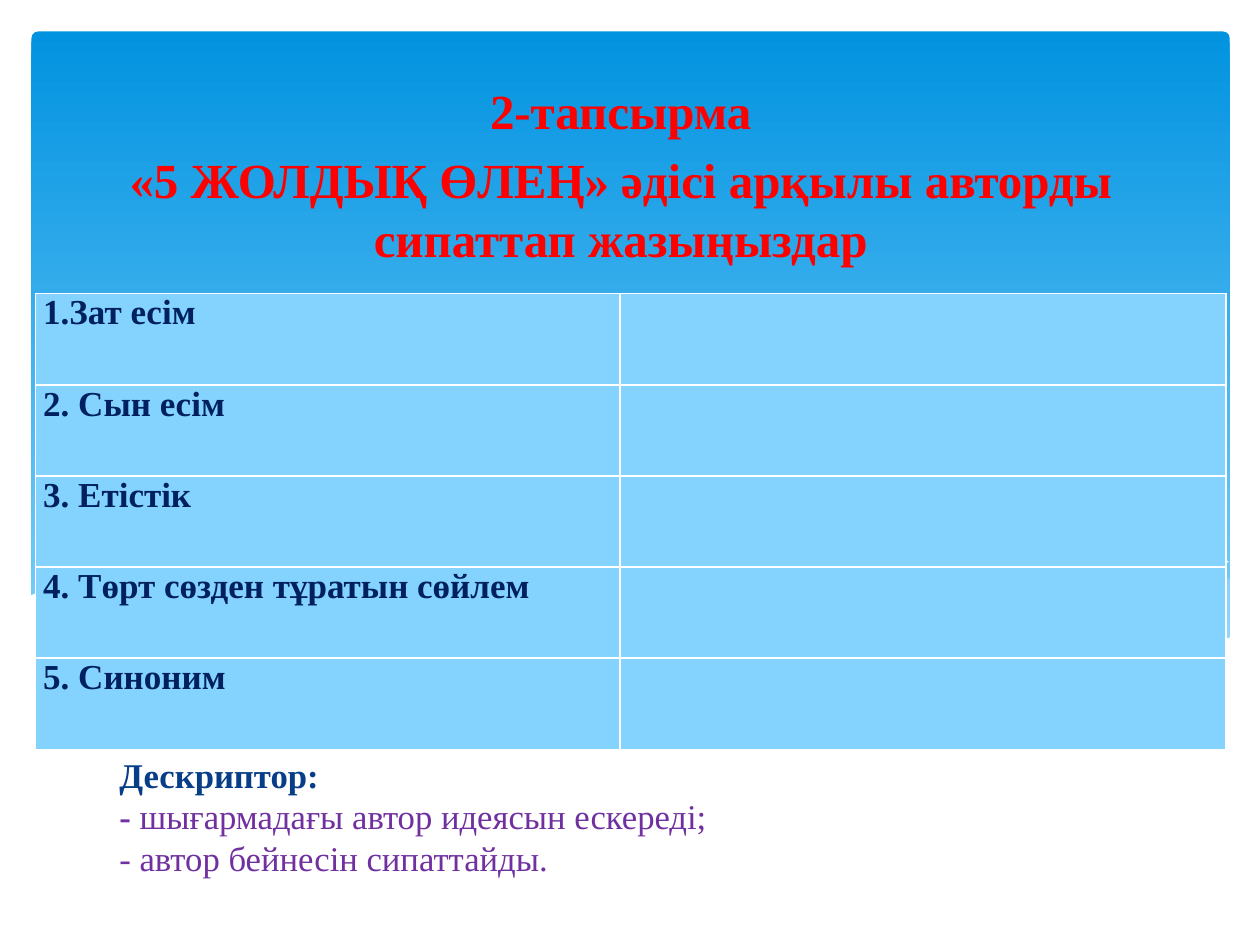
import pptx
import pptx.util
import pptx.dml.color
import pptx.enum.text
import pptx.enum.shapes
import lxml.etree

Pt = pptx.util.Pt
RGB = pptx.dml.color.RGBColor
Align = pptx.enum.text.PP_ALIGN
Anchor = pptx.enum.text.MSO_ANCHOR

WHITE = RGB(255, 255, 255)
DEEP = RGB(0x02, 0x93, 0xE0)
SKY = RGB(0x83, 0xD3, 0xFE)
PALE = RGB(0xC6, 0xE7, 0xFC)
RED = RGB(255, 0, 0)
NAVY = RGB(0x00, 0x20, 0x60)
BLUE = RGB(0x07, 0x3E, 0x87)
PLUM = RGB(0x70, 0x30, 0xA0)

# Content
TITLE = ["2-тапсырма",
         "«5 ЖОЛДЫҚ ӨЛЕҢ» әдісі арқылы авторды сипаттап жазыңыздар"]
ROWS = ["1.Зат есім", "2. Сын есім", "3. Етістік",
        "4. Төрт сөзден тұратын сөйлем", "5. Синоним"]
# Each line holds runs of text, colour, bold
NOTES = [[("Дескриптор:", BLUE, True)],
         [("- ", PLUM, True),
          ("шығармадағы автор идеясын ескереді;", PLUM, False)],
         [("- автор бейнесін сипаттайды.", PLUM, False)]]

# Waves: fill, opacity in percent, outline points
WAVES = [
    (PALE, 29, [(702, 331), (663, 338), (620, 348), (561, 362), (508, 373),
                (476, 378), (518, 384), (562, 387), (601, 387), (640, 383),
                (673, 376), (702, 365), (703, 365), (703, 331)]),
    (PALE, 40, [(643, 384), (603, 378), (558, 370), (508, 360), (453, 347),
                (410, 337), (370, 330), (335, 325), (287, 321), (248, 321),
                (206, 325), (246, 330), (291, 339), (353, 354), (408, 366),
                (456, 376), (500, 382), (539, 386), (581, 388), (617, 387)]),
    (WHITE, 0, [(222, 328), (248, 324), (289, 322), (338, 323), (400, 329),
                (458, 337), (523, 350), (598, 368), (653, 383)]),
    (WHITE, 0, [(441, 372), (470, 364), (518, 352), (580, 338), (634, 328),
                (675, 322), (702, 321)]),
    (WHITE, 100, [(703.5, 364), (670, 376), (630, 383), (582, 387),
                  (535, 385), (481, 378), (417, 367), (362, 355), (322, 346),
                  (263, 332), (210, 325), (166, 320), (127, 320), (95, 322),
                  (61, 328), (33, 334), (16.6, 340.6), (16.6, 424),
                  (703.5, 424)]),
]


def style(run, **vals):
    run.font.name = "Times New Roman"
    run.font.color.rgb = vals.pop("tint")
    for key, val in vals.items():
        setattr(run.font, key, val)


def add_box(left, top, wide, high):
    frame = slide.shapes.add_textbox(
        Pt(left), Pt(top), Pt(wide), Pt(high)).text_frame
    frame.word_wrap = True
    return frame


show = pptx.Presentation()
show.slide_width, show.slide_height = Pt(720), Pt(540)
slide = show.slides.add_slide(show.slide_layouts[6])

# Gradient panel
panel = slide.shapes.add_shape(
    pptx.enum.shapes.MSO_SHAPE.ROUNDED_RECTANGLE,
    Pt(18), Pt(18), Pt(684.7), Pt(373))
panel.adjustments[0] = 0.01
panel.shadow.inherit = False
panel.line.fill.background()
panel.fill.gradient()
panel.fill.gradient_angle = 270
for stop, place, tint in zip(panel.fill.gradient_stops, (0, 1), (DEEP, SKY)):
    stop.position = place
    stop.color.rgb = tint

# Waves: an unfilled one is an open white curve
for tint, part, spots in WAVES:
    spots = [(Pt(x), Pt(y)) for x, y in spots]
    pen = slide.shapes.build_freeform(*spots[0])
    pen.add_line_segments(spots[1:], close=part > 0)
    wave = pen.convert_to_shape()
    wave.shadow.inherit = False
    if part:
        wave.line.fill.background()
        wave.fill.solid()
        wave.fill.fore_color.rgb = tint
        hue = wave.fill._xPr.find(".//{*}srgbClr")
        lxml.etree.SubElement(
            hue, pptx.oxml.ns.qn("a:alpha"), val=str(part * 1000))
    else:
        wave.fill.background()
        wave.line.color.rgb = tint
        wave.line.width = Pt(0)

# Descriptor notes
para = add_box(61.2, 427, 640, 111.6).paragraphs[0]
para.line_spacing = Pt(23.8)
for i, line in enumerate(NOTES):
    if i:
        para.add_line_break()
    for text, tint, bold in line:
        run = para.add_run()
        run.text = text
        style(run, tint=tint, bold=bold, size=Pt(19.8))

# Heading
head = add_box(20.2, 25.9, 668.9, 130.3)
head.vertical_anchor = Anchor.BOTTOM
for i, text in enumerate(TITLE):
    para = head.add_paragraph() if i else head.paragraphs[0]
    para.alignment = Align.CENTER
    para.space_before = Pt(5.6 if i else 0)
    run = para.add_run()
    run.text = text
    style(run, tint=RED, bold=True, size=Pt(28))

# Table
COLS = (334.1, 346.3)
STEP = 52.1
table = slide.shapes.add_table(
    len(ROWS), len(COLS), Pt(20.2), Pt(167.8),
    Pt(sum(COLS)), Pt(STEP * len(ROWS))).table
for col, wide in zip(table.columns, COLS):
    col.width = Pt(wide)
for row, text in zip(table.rows, ROWS):
    row.height = Pt(STEP)
    for cell in row.cells:
        cell.fill.solid()
        cell.fill.fore_color.rgb = SKY
    cell = row.cells[0]
    for key, gap in {"left": 4.5, "right": 4.5, "top": 0, "bottom": 0}.items():
        setattr(cell, "margin_" + key, Pt(gap))
    run = cell.text_frame.paragraphs[0].add_run()
    run.text = text
    style(run, tint=NAVY, bold=True, size=Pt(20))

show.save("out.pptx")
